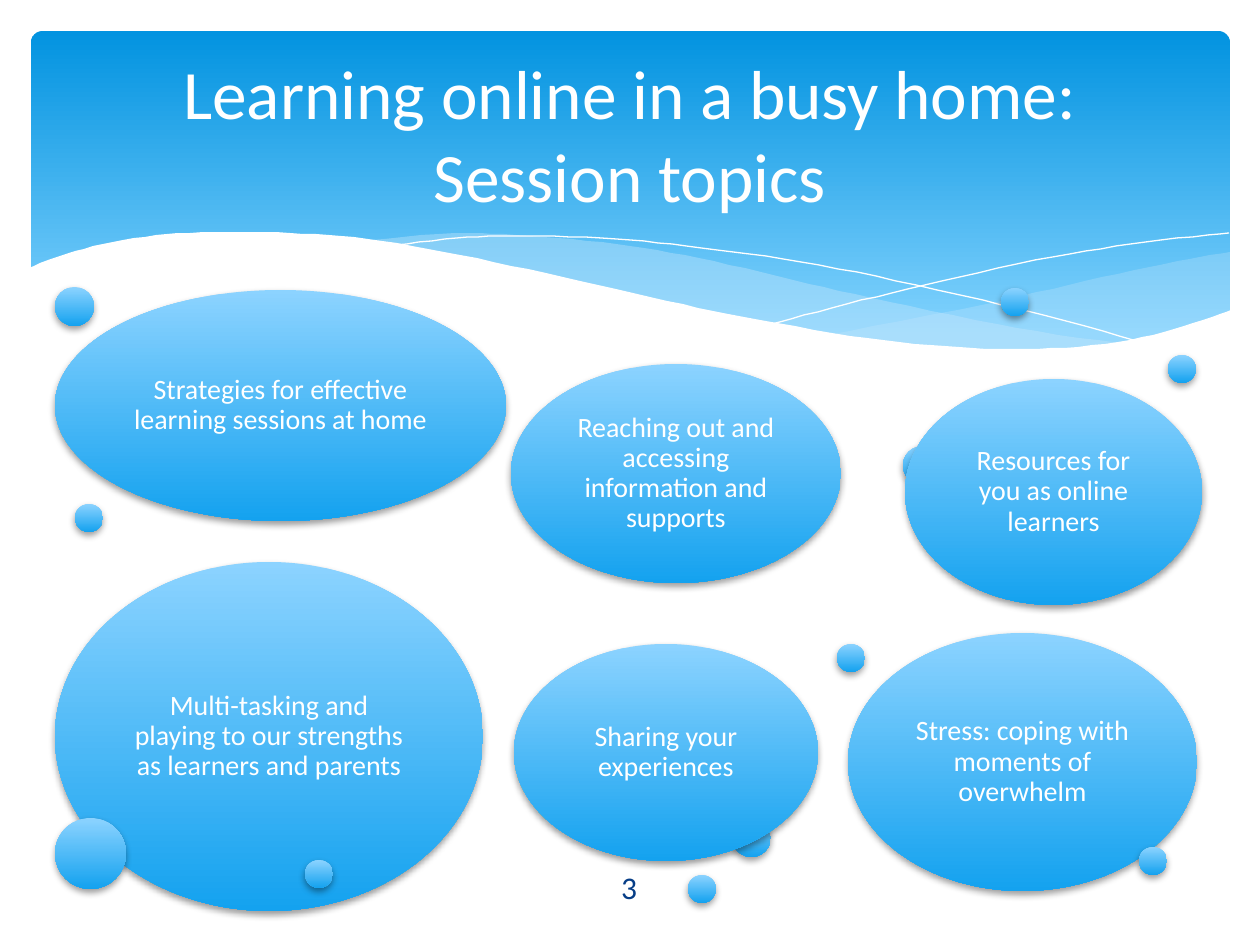
import pptx
import pptx.util
import pptx.dml.color
import pptx.enum.shapes
import pptx.enum.text
import lxml.etree

SCALE = 914400 / 126
COLOURS = {
    "white": "FFFFFF", "header_top": "0293E0", "header_end": "83D3FE",
    "bubble_top": "8CD3FF", "bubble_end": "14A2EF", "wave": "C6E7FC",
    "number": "073E87", "shadow": "000000",
}
DRAWING = "http://schemas.openxmlformats.org/drawingml/2006/main"
SHAPES = pptx.enum.shapes.MSO_SHAPE


def emu(pixels):
    """Turn pixels into EMU."""
    return pptx.util.Emu(round(pixels * SCALE))


def rgb(name):
    """Look up a named colour."""
    return pptx.dml.color.RGBColor.from_string(COLOURS[name])


def add_node(parent, tag, **attributes):
    """Append a DrawingML element with the given attributes."""
    values = {key: str(value) for key, value in attributes.items()}
    return lxml.etree.SubElement(parent, "{%s}%s" % (DRAWING, tag), values)


def smooth(points, steps=6):
    """Sample a soft curve that passes through all points."""
    padded = [points[0], *points, points[-1]]
    curve = [points[0]]
    for a, b, c, d in zip(padded, padded[1:], padded[2:], padded[3:]):
        for step in range(1, steps + 1):
            t = step / steps
            curve.append(tuple(
                (2 * q + (r - p) * t + (2 * p - 5 * q + 4 * r - s) * t ** 2
                 + (3 * q - p - 3 * r + s) * t ** 3) / 2
                for p, q, r, s in zip(a, b, c, d)))
    return curve


class Painter:
    """Holds the text style and the current slide."""

    font = "Calibri"

    def __init__(self, page):
        """Start on the given slide."""
        self.page = page

    def label(self, shape, words, size, colour, margins=None, spacing=None):
        """Put centred text into a shape."""
        frame = shape.text_frame
        frame.text = words
        frame.word_wrap = True
        frame.vertical_anchor = pptx.enum.text.MSO_ANCHOR.MIDDLE
        if margins is not None:
            frame.margin_left = frame.margin_right = emu(margins)
            frame.margin_top = frame.margin_bottom = emu(margins)
        para = frame.paragraphs[0]
        para.alignment = pptx.enum.text.PP_ALIGN.CENTER
        para.line_spacing = spacing
        span = para.runs[0]
        span.font.name = self.font
        span.font.size = pptx.util.Pt(size)
        span.font.color.rgb = rgb(colour)

    def text(self, box, words, size, colour):
        """Add a text box."""
        shape = self.page.shapes.add_textbox(*map(emu, box))
        self.label(shape, words, size, colour)

    def gradient(self, kind, box, first, last, end=1.0):
        """Add a preset shape with a gradient from top to bottom."""
        shape = self.page.shapes.add_shape(kind, *map(emu, box))
        shape.shadow.inherit = False
        shape.line.fill.background()
        shape.fill.gradient()
        shape.fill.gradient_angle = 270
        stops = shape.fill.gradient_stops
        for stop, colour, position in zip(stops, (first, last), (0, end)):
            stop.color.rgb = rgb(colour)
            stop.position = position
        return shape

    def bubble(self, box, words=None):
        """Add a shaded ellipse, with text if it names a topic."""
        shape = self.gradient(SHAPES.OVAL, box, "bubble_top", "bubble_end")
        effects = shape._element.spPr.find("{%s}effectLst" % DRAWING)
        shadow = add_node(effects, "outerShdw", blurRad=50800, dist=25400,
                          dir=5400000, rotWithShape=0)
        colour = add_node(shadow, "srgbClr", val=COLOURS["shadow"])
        add_node(colour, "alpha", val=38000)
        if words:
            self.label(shape, words, 16, "white", margins=9, spacing=0.9)

    def outline(self, points, closed):
        """Add a freeform through the points."""
        builder = self.page.shapes.build_freeform(*points[0], scale=SCALE)
        builder.add_line_segments(points[1:], close=closed)
        shape = builder.convert_to_shape()
        shape.shadow.inherit = False
        return shape

    def area(self, points, colour, opacity=100):
        """Add a filled freeform without a line."""
        shape = self.outline(points, True)
        shape.line.fill.background()
        shape.fill.solid()
        shape.fill.fore_color.rgb = rgb(colour)
        if opacity < 100:
            node = shape._element.spPr.find(
                "{%s}solidFill/{%s}srgbClr" % (DRAWING, DRAWING))
            add_node(node, "alpha", val=opacity * 1000)

    def curve(self, points, colour):
        """Add an open hairline."""
        shape = self.outline(smooth(points), False)
        shape.fill.background()
        shape.line.color.rgb = rgb(colour)
        shape.line.width = pptx.util.Pt(0)


RIGHT_TOP = [(1230, 252), (1178, 261), (1085, 281), (982, 305), (833, 334)]
RIGHT_BOTTOM = [(833, 334), (906, 343), (984, 349), (1064, 349), (1130, 341),
                (1187, 326), (1230, 311)]
MIDDLE_TOP = [(1125, 344), (1017, 328), (890, 302), (793, 280), (699, 258),
              (616, 244), (529, 236), (455, 233), (360, 241)]
MIDDLE_BOTTOM = [(360, 241), (456, 256), (566, 280), (713, 312), (819, 333),
                 (910, 345), (989, 350), (1056, 350), (1125, 344)]
HAIRLINES = [
    [(389, 246), (457, 238), (524, 236), (616, 239), (701, 248), (801, 262),
     (916, 285), (1047, 316), (1143, 343)],
    [(772, 324), (847, 304), (942, 281), (1053, 257), (1146, 242),
     (1229, 233)],
]
FRONT_WAVE = [(29, 268), (75, 251), (134, 238), (203, 232), (290, 233),
              (368, 239), (460, 255), (563, 277), (667, 301), (760, 320),
              (867, 338), (959, 347), (1037, 349), (1118, 342), (1184, 326),
              (1231, 310)]
BUBBLES = [
    ((55, 562, 428, 349),
     "Multi-tasking and playing to our strengths as learners and parents"),
    ((1001, 288, 28, 28), None),
    ((732, 818, 39, 39), None),
    ((1168, 355, 28, 28), None),
    ((55, 290, 451, 231), "Strategies for effective learning sessions at home"),
    ((903, 446, 39, 39), None),
    ((55, 818, 71, 71), None),
    ((905, 379, 297, 226), "Resources for you as online learners"),
    ((55, 287, 39, 39), None),
    ((305, 860, 28, 28), None),
    ((848, 633, 349, 258), "Stress: coping with moments of overwhelm"),
    ((837, 644, 28, 28), None),
    ((514, 644, 304, 217), "Sharing your experiences"),
    ((688, 875, 28, 28), None),
    ((511, 364, 330, 219),
     "Reaching out and accessing information and supports"),
    ((75, 504, 28, 28), None),
    ((1139, 847, 28, 28), None),
]


def main():
    """Build and save the slide."""
    deck = pptx.Presentation()
    deck.slide_width, deck.slide_height = emu(1260), emu(945)
    painter = Painter(deck.slides.add_slide(deck.slide_layouts[6]))
    header = painter.gradient(SHAPES.ROUNDED_RECTANGLE, (31, 31, 1199, 340),
                              "header_top", "header_end", 0.9)
    header.adjustments[0] = 0.034
    painter.area(smooth(RIGHT_TOP) + smooth(RIGHT_BOTTOM), "wave", 29)
    painter.area(smooth(MIDDLE_TOP) + smooth(MIDDLE_BOTTOM), "wave", 40)
    for points in HAIRLINES:
        painter.curve(points, "white")
    painter.area(smooth(FRONT_WAVE) + [(1231, 415), (29, 415)], "white")
    painter.text((63, 47, 1134, 173),
                 "Learning online in a busy home: Session topics", 39.6, "white")
    for box, words in BUBBLES:
        painter.bubble(box, words)
    painter.text((549, 862, 160, 50), "3", 18, "number")
    deck.save("out.pptx")


main()
